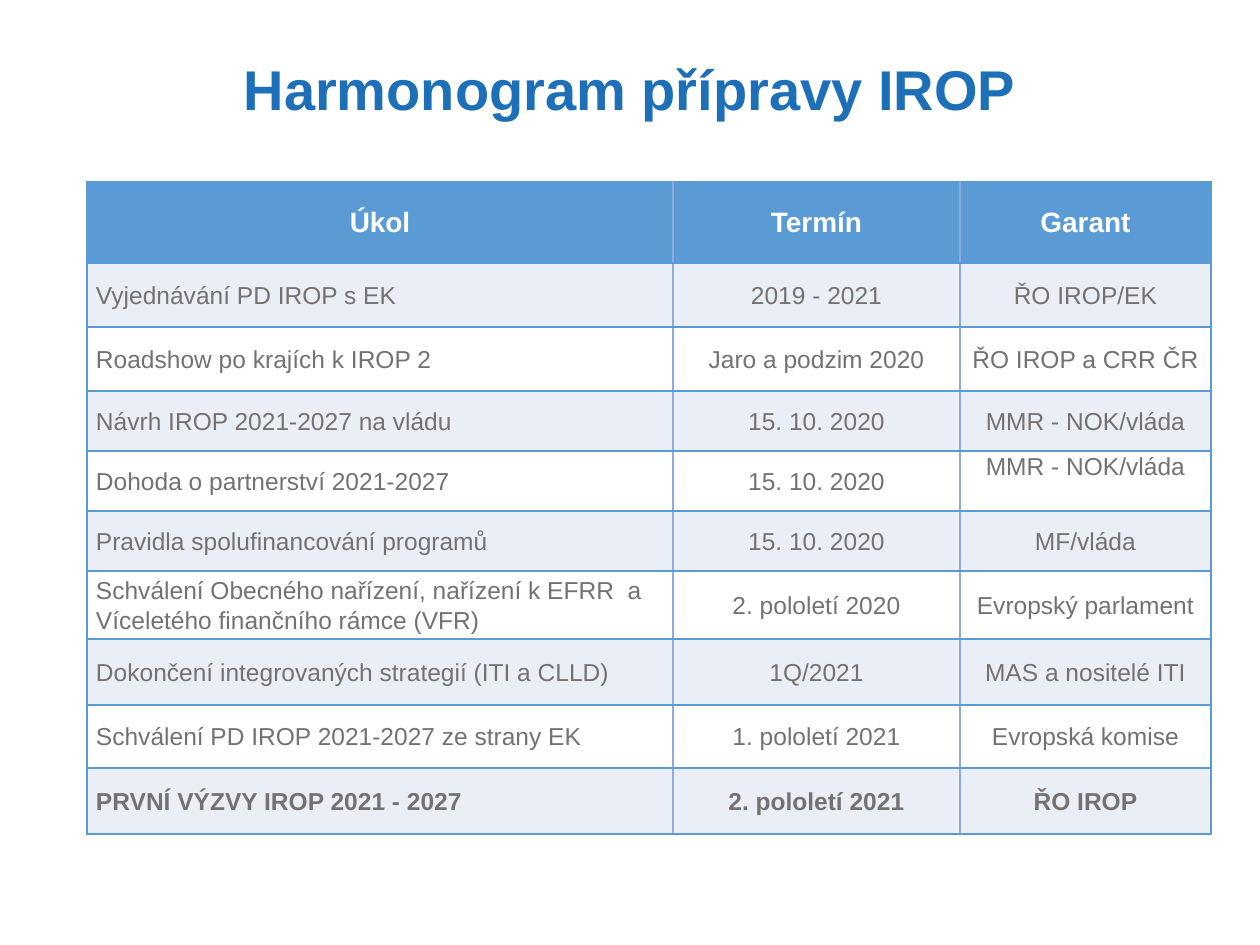
from lxml import etree
from pptx import Presentation
from pptx.dml.color import RGBColor
from pptx.enum.text import MSO_ANCHOR, PP_ALIGN
from pptx.oxml.ns import qn
from pptx.util import Emu, Pt

LEFT, CENTER = PP_ALIGN.LEFT, PP_ALIGN.CENTER
TOP, MIDDLE = MSO_ANCHOR.TOP, MSO_ANCHOR.MIDDLE

TITLE_BLUE = RGBColor(0x1D, 0x70, 0xB8)
HEADER_BLUE = RGBColor(0x5B, 0x9B, 0xD5)
DIVIDER_BLUE = RGBColor(0x8F, 0xAA, 0xDC)
BAND = RGBColor(0xEA, 0xEF, 0xF7)
WHITE = RGBColor(0xFF, 0xFF, 0xFF)
GREY = RGBColor(0x76, 0x71, 0x71)

SCHEDULE = [
    ("Úkol", "Termín", "Garant"),
    ("Vyjednávání PD IROP s EK", "2019 - 2021", "ŘO IROP/EK"),
    ("Roadshow po krajích k IROP 2", "Jaro a podzim 2020", "ŘO IROP a CRR ČR"),
    ("Návrh IROP 2021-2027 na vládu", "15. 10. 2020", "MMR - NOK/vláda"),
    ("Dohoda o partnerství 2021-2027", "15. 10. 2020", "MMR - NOK/vláda"),
    ("Pravidla spolufinancování programů", "15. 10. 2020", "MF/vláda"),
    ("Schválení Obecného nařízení, nařízení k EFRR  a Víceletého finančního rámce (VFR)",
     "2. pololetí 2020", "Evropský parlament"),
    ("Dokončení integrovaných strategií (ITI a CLLD)", "1Q/2021", "MAS a nositelé ITI"),
    ("Schválení PD IROP 2021-2027 ze strany EK", "1. pololetí 2021", "Evropská komise"),
    ("PRVNÍ VÝZVY IROP 2021 - 2027", "2. pololetí 2021", "ŘO IROP"),
]
COLUMN_WIDTHS = [586, 287, 251]
ROW_HEIGHTS = [81, 64, 64, 60, 60, 60, 68, 66, 63, 66]
RAISED_CELL = (4, 2)


def px(length):
    return Emu(round(length * 914400 / 126))


def write(frame, text, *, size, color, bold=False, align=CENTER, spacing=1.0):
    paragraph = frame.paragraphs[0]
    paragraph.alignment = align
    paragraph.line_spacing = spacing
    run = paragraph.add_run()
    run.text = text
    run.font.name = "Arial"
    run.font.size = Pt(size)
    run.font.bold = bold
    run.font.color.rgb = color


prs = Presentation()
prs.slide_width, prs.slide_height = px(1260), px(945)
slide = prs.slides.add_slide(prs.slide_layouts[5])

title = slide.shapes.title
title.left, title.top, title.width, title.height = px(87), px(42), px(1086), px(173)
heading = title.text_frame
heading.word_wrap = True
heading.vertical_anchor = MIDDLE
heading.margin_left = heading.margin_right = px(13)
heading.margin_top, heading.margin_bottom = px(6), px(79)
write(heading, "Harmonogram přípravy IROP", size=32, color=TITLE_BLUE, bold=True, spacing=0.9)

table = slide.shapes.add_table(
    len(SCHEDULE), len(COLUMN_WIDTHS),
    px(87), px(182), px(sum(COLUMN_WIDTHS)), px(sum(ROW_HEIGHTS))).table
for column, width in zip(table.columns, COLUMN_WIDTHS):
    column.width = px(width)
for row, height in zip(table.rows, ROW_HEIGHTS):
    row.height = px(height)

last_row, last_column = len(SCHEDULE) - 1, len(COLUMN_WIDTHS) - 1
for r, entries in enumerate(SCHEDULE):
    for c, text in enumerate(entries):
        cell = table.cell(r, c)
        cell.margin_left = cell.margin_right = px(9)
        cell.margin_top = cell.margin_bottom = 0
        cell.vertical_anchor = TOP if (r, c) == RAISED_CELL else MIDDLE
        cell.fill.solid()
        if r == 0:
            cell.fill.fore_color.rgb = HEADER_BLUE
            write(cell.text_frame, text, size=16, color=WHITE, bold=True)
        else:
            cell.fill.fore_color.rgb = BAND if r % 2 else WHITE
            write(cell.text_frame, text, size=14, color=GREY, bold=r == last_row,
                  align=CENTER if c else LEFT, spacing=1.07)

        edges = {
            "a:lnL": DIVIDER_BLUE if c else HEADER_BLUE,
            "a:lnR": DIVIDER_BLUE if c < last_column else HEADER_BLUE,
            "a:lnT": HEADER_BLUE,
            "a:lnB": HEADER_BLUE,
        }
        properties = cell._tc.get_or_add_tcPr()
        for position, (edge, color) in enumerate(edges.items()):
            line = etree.Element(qn(edge), w=str(Pt(1)))
            fill = etree.SubElement(line, qn("a:solidFill"))
            etree.SubElement(fill, qn("a:srgbClr"), val=str(color))
            properties.insert(position, line)

prs.save("out.pptx")
